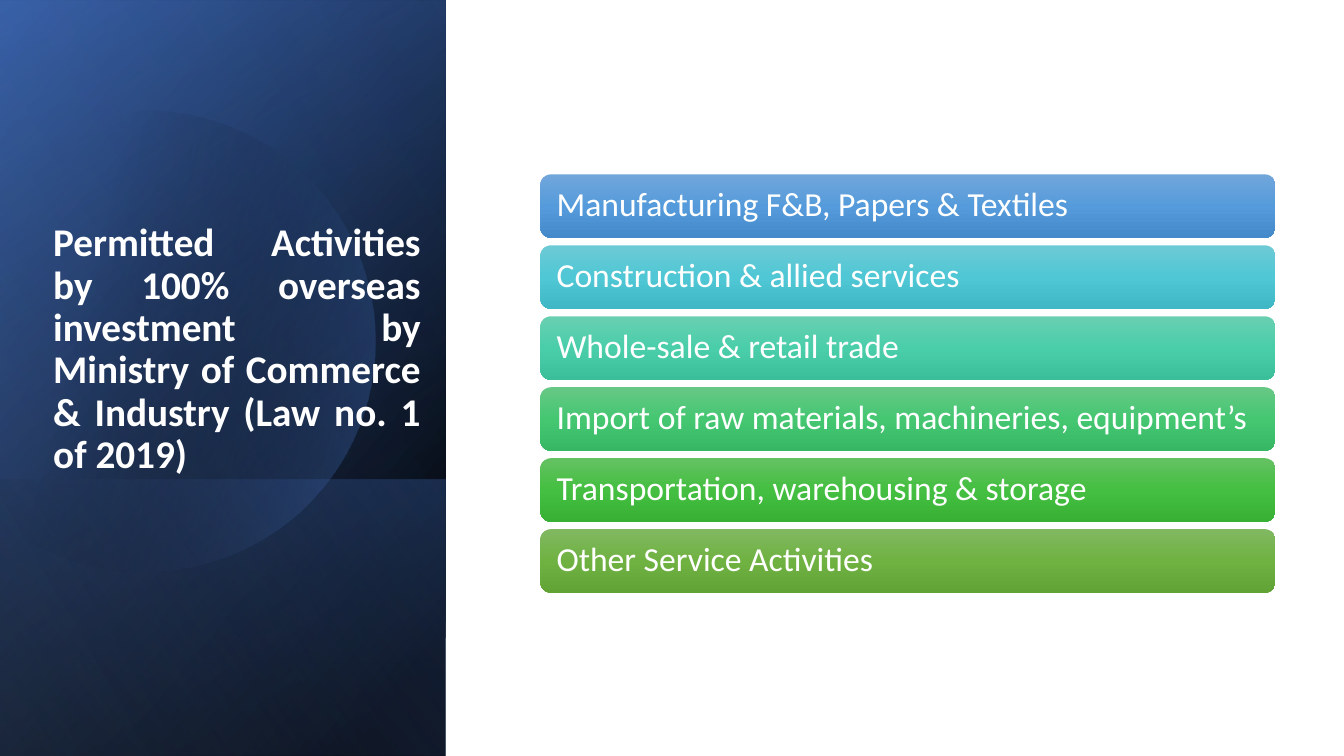
from dataclasses import dataclass

from lxml.etree import SubElement
from pptx import Presentation
from pptx.dml.color import RGBColor
from pptx.enum.shapes import MSO_SHAPE
from pptx.enum.text import MSO_ANCHOR, PP_ALIGN
from pptx.oxml.ns import qn
from pptx.util import Inches, Pt


@dataclass(frozen=True)
class Theme:
    font: str = "Calibri"
    title_size: int = 28
    bar_size: int = 24
    text: str = "FFFFFF"
    black: str = "000000"
    blue: str = "4472C4"
    deep_blue: str = "2F5597"
    pale_blue: str = "8FAADC"


THEME = Theme()

TITLE = ("Permitted Activities by 100% overseas investment by "
         "Ministry of Commerce & Industry (Law no. 1 of 2019)")

ACTIVITIES = [
    ("Manufacturing F&B, Papers & Textiles", ("71A6DB", "559BDB", "448ACA")),
    ("Construction & allied services", ("6DCAD5", "4FC7D5", "3FB7C4")),
    ("Whole-sale & retail trade", ("69CFB1", "4ACEAA", "3BBE9A")),
    ("Import of raw materials, machineries, equipment’s", ("66C885", "45C772", "37B764")),
    ("Transportation, warehousing & storage", ("64C162", "44BF41", "37B034")),
    ("Other Service Activities", ("81B861", "6FB242", "62A336")),
]

# left, top, width, height, gradient angle, stops of (position, colour, opacity)
PANELS = [
    (-1.54, 1.54, 7.5, 4.42, 50, [(8, THEME.black, 100), (100, THEME.deep_blue, 100)]),
    (-1.54, 1.55, 7.5, 4.42, 30, [(0, THEME.black, 0), (99, THEME.blue, 46)]),
    (0.84, 3.92, 2.74, 4.42, 130, [(2, THEME.blue, 29), (100, THEME.black, 30)]),
]
SHEEN = (-1.54, 1.54, 7.5, 4.42, 120, [(0, THEME.black, 0), (99, THEME.pale_blue, 11)])

DISC_START = (1.49, 1.1)
DISC_CURVES = [
    [(2.46, 1.12), (3.35, 1.77), (3.63, 2.75)],
    [(3.98, 3.97), (3.28, 5.23), (2.07, 5.58)],
    [(1.31, 5.8), (0.53, 5.61), (-0.03, 5.14)],
    [(-0.15, 5.03)],
    [(-0.15, 1.75)],
    [(0, 1.61)],
    [(0.23, 1.42), (0.5, 1.28), (0.8, 1.19)],
    [(1.03, 1.13), (1.26, 1.1), DISC_START],
]


def paint_gradient(shape, stops, angle):
    """Fill with (position, colour, opacity) stops, without line or shadow."""
    shape.shadow.inherit = False
    shape.line.fill.background()
    shape.fill.gradient()
    gradient = shape.element.spPr.find(qn("a:gradFill"))
    gradient.clear()
    gradient.set("rotWithShape", "1")
    stop_list = SubElement(gradient, qn("a:gsLst"))
    for position, colour, opacity in stops:
        stop = SubElement(stop_list, qn("a:gs"), pos=str(position * 1000))
        tint = SubElement(stop, qn("a:srgbClr"), val=colour)
        if opacity < 100:
            SubElement(tint, qn("a:alpha"), val=str(opacity * 1000))
    SubElement(gradient, qn("a:lin"), ang=str(round(angle * 60000)), scaled="0")


def write_text(shape, text, *, size, bold=False, align=PP_ALIGN.LEFT,
               anchor=MSO_ANCHOR.MIDDLE, side=0.1, edge=0.05):
    frame = shape.text_frame
    frame.word_wrap = True
    frame.vertical_anchor = anchor
    frame.margin_left = frame.margin_right = Inches(side)
    frame.margin_top = frame.margin_bottom = Inches(edge)
    para = frame.paragraphs[0]
    para.alignment = align
    para.line_spacing = 0.9
    span = para.add_run()
    span.text = text
    span.font.name = THEME.font
    span.font.size = Pt(size)
    span.font.bold = bold
    span.font.color.rgb = RGBColor.from_string(THEME.text)


def add_panel(page, left, top, width, height, angle, stops):
    """Add a mirrored rectangle turned by a quarter."""
    panel = page.shapes.add_shape(MSO_SHAPE.RECTANGLE, Inches(left), Inches(top),
                                  Inches(width), Inches(height))
    panel.rotation = 90
    panel.element.spPr.find(qn("a:xfrm")).set("flipH", "1")
    paint_gradient(panel, stops, angle)


def curve_points(start, first, second, end, steps=24):
    """Points along a cubic curve, leaving out its start."""
    for step in range(1, steps + 1):
        t = step / steps
        weights = ((1 - t) ** 3, 3 * t * (1 - t) ** 2, 3 * t * t * (1 - t), t ** 3)
        yield tuple(sum(weight * point[axis] for weight, point
                        in zip(weights, (start, first, second, end)))
                    for axis in (0, 1))


def add_disc(page):
    points = [DISC_START]
    for segment in DISC_CURVES:
        if len(segment) == 3:
            points.extend(curve_points(points[-1], *segment))
        else:
            points.extend(segment)
    outline = [(Inches(x), Inches(y)) for x, y in points]
    builder = page.shapes.build_freeform(*outline[0])
    builder.add_line_segments(outline[1:], close=True)
    paint_gradient(builder.convert_to_shape(),
                   [(29, THEME.black, 0), (100, THEME.blue, 43)], 13.9)


def add_title(page):
    box = page.shapes.add_textbox(Inches(0.43), Inches(2.16), Inches(3.84), Inches(2.62))
    write_text(box, TITLE, size=THEME.title_size, bold=True,
               align=PP_ALIGN.JUSTIFY, anchor=MSO_ANCHOR.BOTTOM)


def add_activity_bars(page):
    first_top, last_top = 1.73, 5.25
    pitch = (last_top - first_top) / (len(ACTIVITIES) - 1)
    for row, (activity, colours) in enumerate(ACTIVITIES):
        bar = page.shapes.add_shape(MSO_SHAPE.ROUNDED_RECTANGLE, Inches(5.36),
                                    Inches(first_top + row * pitch),
                                    Inches(7.29), Inches(0.63))
        paint_gradient(bar, [(position, colour, 100) for position, colour
                             in zip((0, 50, 100), colours)], 90)
        write_text(bar, activity, size=THEME.bar_size, side=0.13, edge=0.1)


def main():
    deck = Presentation()
    deck.slide_width, deck.slide_height = Inches(13.33), Inches(7.5)
    page = deck.slides.add_slide(deck.slide_layouts[6])
    for panel in PANELS:
        add_panel(page, *panel)
    add_disc(page)
    add_panel(page, *SHEEN)
    add_title(page)
    add_activity_bars(page)
    deck.save("out.pptx")


if __name__ == "__main__":
    main()
